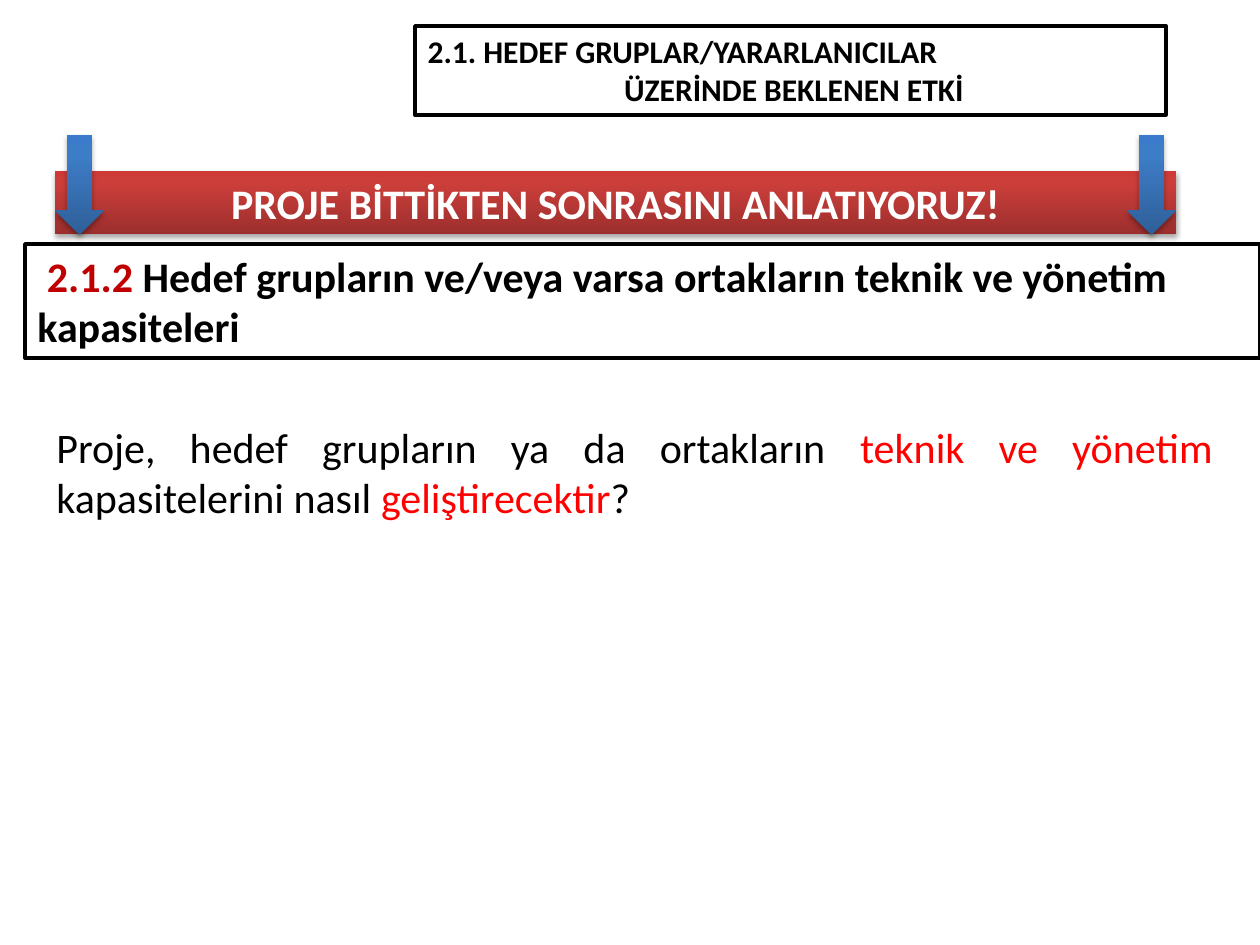
from copy import deepcopy
from dataclasses import dataclass

from lxml import etree
from pptx import Presentation
from pptx.dml.color import RGBColor
from pptx.enum.shapes import MSO_SHAPE
from pptx.enum.text import MSO_ANCHOR, PP_ALIGN
from pptx.oxml.ns import qn
from pptx.util import Emu, Pt

RECT, DOWN_ARROW = MSO_SHAPE.RECTANGLE, MSO_SHAPE.DOWN_ARROW
TOP, MIDDLE = MSO_ANCHOR.TOP, MSO_ANCHOR.MIDDLE
LEFT, CENTER, JUSTIFY = PP_ALIGN.LEFT, PP_ALIGN.CENTER, PP_ALIGN.JUSTIFY
PX = 914400 / 126
FONT = "Calibri"
COLORS = {
    "black": "000000",
    "white": "FFFFFF",
    "dark_red": "C00000",
    "red": "FF0000",
}
RED_FADE = {0: "9C2F2D", 0.8: "CB3E3A", 1: "CE3B37"}
BLUE_FADE = {0: "2F5F99", 0.8: "3D7CC7", 1: "3A7CCB"}


@dataclass
class Box:
    x: int
    y: int
    w: int
    h: int

    def emu(self) -> list[Emu]:
        return [Emu(round(v * PX)) for v in (self.x, self.y, self.w, self.h)]


@dataclass
class Run:
    text: str
    color: str = "black"


@dataclass
class Para:
    runs: list[Run]
    align: PP_ALIGN = LEFT


def rgb(name: str) -> RGBColor:
    return RGBColor.from_string(COLORS[name])


def write(sp, paras: list[Para], size: int, bold: bool, anchor=TOP) -> None:
    tf = sp.text_frame
    tf.word_wrap = True
    tf.vertical_anchor = anchor
    for i, para in enumerate(paras):
        p = tf.add_paragraph() if i else tf.paragraphs[0]
        p.alignment = para.align
        for run in para.runs:
            r = p.add_run()
            r.text = run.text
            r.font.name = FONT
            r.font.size = Pt(size)
            r.font.bold = bold
            r.font.color.rgb = rgb(run.color)


def outline(sp) -> None:
    sp.fill.solid()
    sp.fill.fore_color.rgb = rgb("white")
    sp.line.color.rgb = rgb("black")
    sp.line.width = Pt(2)


def add_shape(slide, kind, box: Box):
    sp = slide.shapes.add_shape(kind, *box.emu())
    sp.shadow.inherit = False
    return sp


def add_glossy(slide, kind, box: Box, fade: dict[float, str]):
    sp = add_shape(slide, kind, box)
    sp.line.fill.background()
    sp.fill.gradient()
    sp.fill.gradient_angle = 90
    spPr = sp._element.spPr
    stops = spPr.find(".//" + qn("a:gsLst"))
    stops.append(deepcopy(stops[0]))
    for stop, (pos, color) in zip(sp.fill.gradient_stops, fade.items()):
        stop.color.rgb = RGBColor.from_string(color)
        stop.position = pos
    shadow = etree.SubElement(
        spPr.find(qn("a:effectLst")), qn("a:outerShdw"),
        blurRad=str(Pt(3.1)), dist=str(Pt(1.8)), dir="5400000", rotWithShape="0")
    color = etree.SubElement(shadow, qn("a:srgbClr"), val=COLORS["black"])
    etree.SubElement(color, qn("a:alpha"), val="35000")
    return sp


def main() -> None:
    prs = Presentation()
    prs.slide_width, prs.slide_height = Emu(round(1260 * PX)), Emu(round(945 * PX))
    slide = prs.slides.add_slide(prs.slide_layouts[5])

    title = slide.shapes.title
    title.left, title.top, title.width, title.height = Box(415, 26, 751, 89).emu()
    outline(title)
    write(title, [
        Para([Run("2.1. HEDEF GRUPLAR/YARARLANICILAR")]),
        Para([Run(" ÜZERİNDE BEKLENEN ETKİ")], CENTER),
    ], 18, True)

    heading = add_shape(slide, RECT, Box(25, 244, 1235, 114))
    outline(heading)
    write(heading, [Para([
        Run(" 2.1.2 ", "dark_red"),
        Run("Hedef grupların ve/veya varsa ortakların teknik ve yönetim kapasiteleri"),
    ])], 24, True)

    banner_box = Box(55, 171, 1121, 63)
    banner = add_glossy(slide, RECT, banner_box, RED_FADE)
    write(banner, [
        Para([Run("PROJE BİTTİKTEN SONRASINI ANLATIYORUZ!", "white")], CENTER),
    ], 24, True, MIDDLE)

    arrow_w = 49
    for x in (banner_box.x, banner_box.x + banner_box.w - arrow_w):
        add_glossy(slide, DOWN_ARROW, Box(x, 135, arrow_w, 100), BLUE_FADE)

    question = slide.shapes.add_textbox(*Box(44, 415, 1181, 115).emu())
    write(question, [Para([
        Run("Proje, hedef grupların ya da ortakların "),
        Run("teknik ve yönetim ", "red"),
        Run("kapasitelerini nasıl "),
        Run("geliştirecektir", "red"),
        Run("?"),
    ], JUSTIFY)], 24, False)

    prs.save("out.pptx")


if __name__ == "__main__":
    main()
